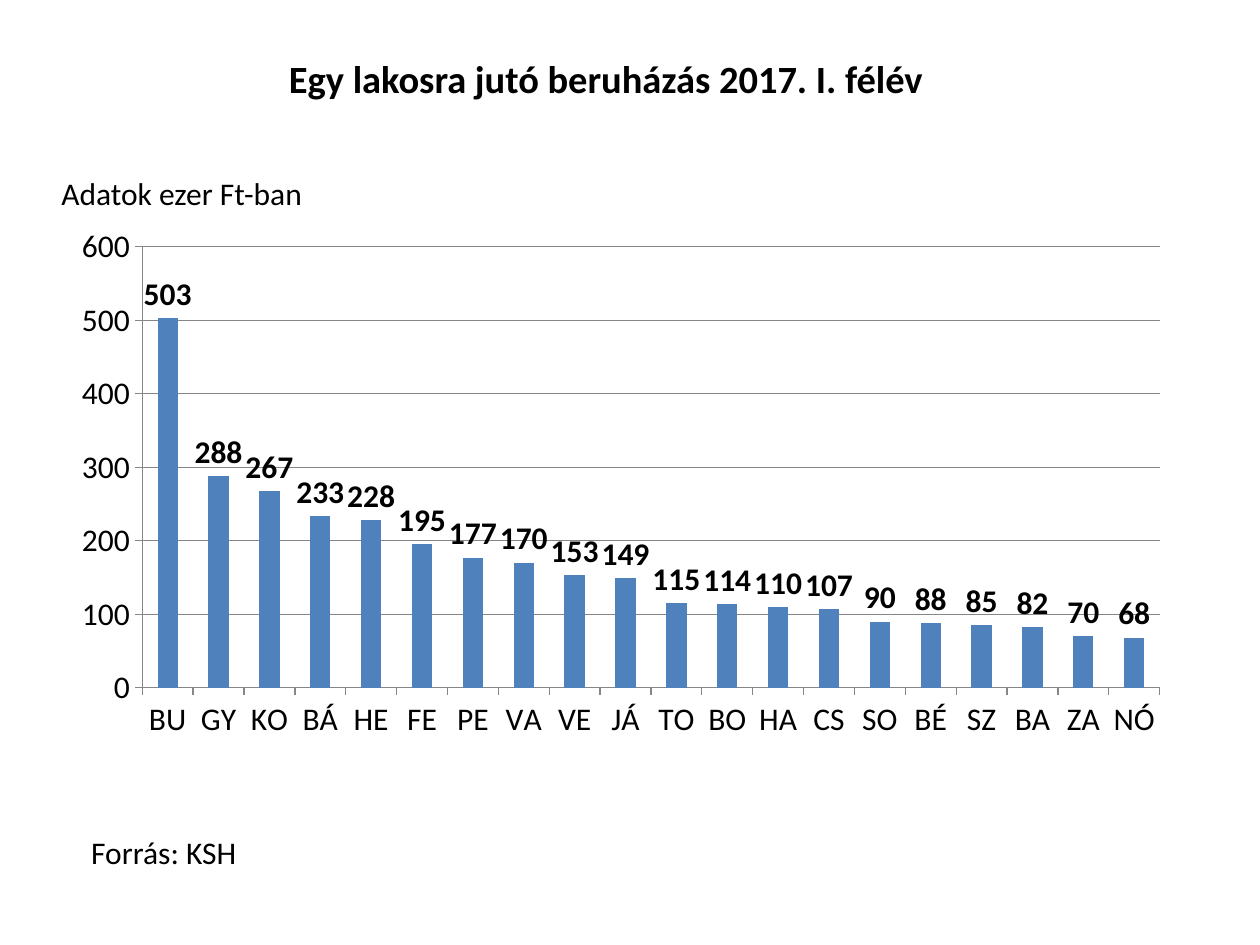
from pptx import Presentation
from pptx.chart.data import CategoryChartData
from pptx.dml.color import RGBColor
from pptx.enum.chart import XL_CHART_TYPE, XL_LABEL_POSITION, XL_TICK_MARK
from pptx.enum.text import MSO_ANCHOR, PP_ALIGN
from pptx.util import Pt

COLORS = {"text": "000000", "bar": "4F81BD", "line": "868686"}
FONT = "Calibri"
INVESTMENT = {
    "BU": 503, "GY": 288, "KO": 267, "BÁ": 233, "HE": 228,
    "FE": 195, "PE": 177, "VA": 170, "VE": 153, "JÁ": 149,
    "TO": 115, "BO": 114, "HA": 110, "CS": 107, "SO": 90,
    "BÉ": 88, "SZ": 85, "BA": 82, "ZA": 70, "NÓ": 68,
}


def style_font(font, size, bold=False):
    font.name = FONT
    font.size = Pt(size)
    font.bold = bold
    font.color.rgb = RGBColor.from_string(COLORS["text"])


def write_text(box, text, size, bold=False, align=PP_ALIGN.LEFT):
    frame = box.text_frame
    frame.word_wrap = True
    frame.vertical_anchor = MSO_ANCHOR.TOP
    para = frame.paragraphs[0]
    para.alignment = align
    span = para.add_run()
    span.text = text
    style_font(span.font, size, bold)


deck = Presentation()
deck.slide_width, deck.slide_height = Pt(720), Pt(540)
page = deck.slides.add_slide(deck.slide_layouts[5])

title = page.shapes.title
title.left, title.top, title.width, title.height = Pt(101.5), Pt(28), Pt(489.6), Pt(34)
write_text(title, "Egy lakosra jutó beruházás 2017. I. félév", 22, True, PP_ALIGN.CENTER)

unit_note = page.shapes.add_textbox(Pt(28), Pt(96), Pt(174), Pt(29))
write_text(unit_note, "Adatok ezer Ft-ban", 18)
source_note = page.shapes.add_textbox(Pt(45), Pt(472.5), Pt(253), Pt(29))
write_text(source_note, "Forrás: KSH", 18)

data = CategoryChartData()
data.categories = list(INVESTMENT)
data.add_series("Beruházás", list(INVESTMENT.values()))
chart = page.shapes.add_chart(
    XL_CHART_TYPE.COLUMN_CLUSTERED, Pt(34), Pt(124), Pt(641.5), Pt(304), data
).chart
chart.has_title = False
chart.has_legend = False
style_font(chart.font, 18)

value_axis = chart.value_axis
value_axis.minimum_scale = 0
value_axis.maximum_scale = 600
value_axis.major_unit = 100
value_axis.has_major_gridlines = True
for axis in (chart.category_axis, value_axis):
    axis.major_tick_mark = XL_TICK_MARK.OUTSIDE
    axis.minor_tick_mark = XL_TICK_MARK.NONE
    style_font(axis.tick_labels.font, 18)
for line in (
    chart.category_axis.format.line,
    value_axis.format.line,
    value_axis.major_gridlines.format.line,
):
    line.color.rgb = RGBColor.from_string(COLORS["line"])
    line.width = Pt(0.75)

plot = chart.plots[0]
plot.gap_width = 150
plot.vary_by_categories = False
bars = plot.series[0].format.fill
bars.solid()
bars.fore_color.rgb = RGBColor.from_string(COLORS["bar"])
plot.has_data_labels = True
labels = plot.data_labels
labels.show_value = True
labels.position = XL_LABEL_POSITION.OUTSIDE_END
style_font(labels.font, 18, True)

deck.save("out.pptx")
